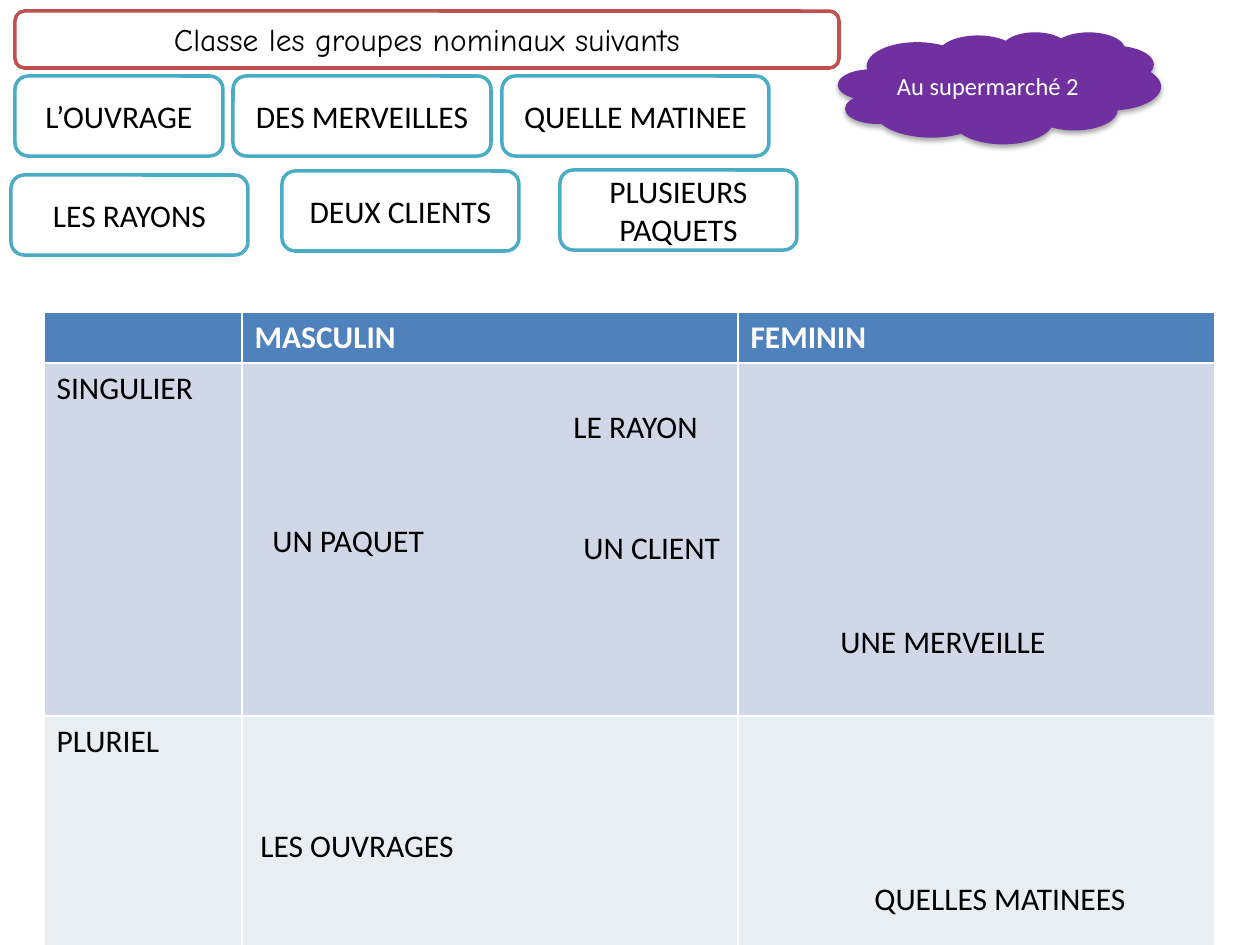
from lxml.etree import SubElement
from pptx import Presentation
from pptx.dml.color import RGBColor
from pptx.enum.shapes import MSO_SHAPE as Shape
from pptx.enum.text import MSO_ANCHOR as Anchor, MSO_AUTO_SIZE as AutoSize, PP_ALIGN as Align
from pptx.oxml.ns import qn
from pptx.util import Pt

PX = 914400 / 126
WHITE = RGBColor(0xFF, 0xFF, 0xFF)
BLACK = RGBColor(0, 0, 0)
RED = RGBColor(0xC0, 0x50, 0x4D)
TEAL = RGBColor(0x4B, 0xAC, 0xC6)
PURPLE = RGBColor(0x70, 0x30, 0xA0)
HEADER_BLUE = RGBColor(0x4F, 0x81, 0xBD)
BAND_DARK = RGBColor(0xD0, 0xD8, 0xE8)
BAND_LIGHT = RGBColor(0xE9, 0xED, 0xF4)


def emu(*lengths):
    return [round(length * PX) for length in lengths]


def write(frame, text, color=BLACK, size=18, name="Calibri", align=Align.LEFT, bold=False):
    frame.text = text
    para = frame.paragraphs[0]
    para.alignment = align
    para.font.size = Pt(size)
    para.font.name = name
    para.font.bold = bold
    para.font.color.rgb = color


deck = Presentation()
deck.slide_width, deck.slide_height = emu(1260, 945)
page = deck.slides.add_slide(deck.slide_layouts[6])

rows = [
    (50, HEADER_BLUE, WHITE, ["", "MASCULIN", "FEMININ"]),
    (353, BAND_DARK, BLACK, ["SINGULIER", "", ""]),
    (239, BAND_LIGHT, BLACK, ["PLURIEL", "", ""]),
]
table = page.shapes.add_table(3, 3, *emu(44, 312, 1171, 642)).table
for column, width in zip(table.columns, emu(198, 496, 477)):
    column.width = width
for row, (height, fill, color, texts) in zip(table.rows, rows):
    row.height = emu(height)[0]
    for cell, text in zip(row.cells, texts):
        cell.fill.solid()
        cell.fill.fore_color.rgb = fill
        write(cell.text_frame, text, color, bold=fill == HEADER_BLUE)

labels = [
    ("Classe les groupes nominaux suivants", 15, 11, 824, 57, RED),
    ("L’OUVRAGE", 15, 76, 208, 80, TEAL),
    ("DES MERVEILLES", 233, 76, 258, 80, TEAL),
    ("QUELLE MATINEE", 502, 76, 267, 80, TEAL),
    ("LES RAYONS", 11, 175, 237, 80, TEAL),
    ("DEUX CLIENTS", 282, 171, 237, 80, TEAL),
    ("PLUSIEURS PAQUETS", 560, 170, 237, 80, TEAL),
]
for text, left, top, width, height, color in labels:
    label = page.shapes.add_shape(Shape.ROUNDED_RECTANGLE, *emu(left, top, width, height))
    label.shadow.inherit = False
    label.fill.solid()
    label.fill.fore_color.rgb = WHITE
    label.line.color.rgb = color
    label.line.width = Pt(2)
    frame = label.text_frame
    frame.word_wrap = True
    if color == RED:
        frame.vertical_anchor = Anchor.TOP
        frame.auto_size = AutoSize.SHAPE_TO_FIT_TEXT
        write(frame, text, name="Comic Neue", align=Align.CENTER)
    else:
        frame.vertical_anchor = Anchor.MIDDLE
        write(frame, text, align=Align.CENTER)

cloud = page.shapes.add_shape(Shape.CLOUD, *emu(838, 32, 323, 112))
cloud.shadow.inherit = False
cloud.fill.solid()
cloud.fill.fore_color.rgb = PURPLE
cloud.line.fill.background()
cloud.text_frame.word_wrap = True
cloud.text_frame.vertical_anchor = Anchor.MIDDLE
write(cloud.text_frame, "Au supermarché 2", WHITE, 14, align=Align.CENTER)
effects = cloud.element.spPr.find(qn("a:effectLst"))
shadow = SubElement(effects, qn("a:outerShdw"), blurRad=str(Pt(3.1)), dist=str(Pt(1.8)),
                    dir="5400000", rotWithShape="0")
shade = SubElement(shadow, qn("a:srgbClr"), val="000000")
SubElement(shade, qn("a:alpha"), val="35000")

answers = [
    ("LES OUVRAGES", 248, 820, 242),
    ("UNE MERVEILLE", 828, 616, 383),
    ("QUELLES MATINEES", 862, 873, 315),
    ("LE RAYON", 561, 401, 168),
    ("UN CLIENT", 571, 522, 168),
    ("UN PAQUET", 260, 515, 183),
]
for text, left, top, width in answers:
    box = page.shapes.add_textbox(*emu(left, top, width, 50))
    box.text_frame.word_wrap = True
    box.text_frame.auto_size = AutoSize.SHAPE_TO_FIT_TEXT
    write(box.text_frame, text)

deck.save("out.pptx")
